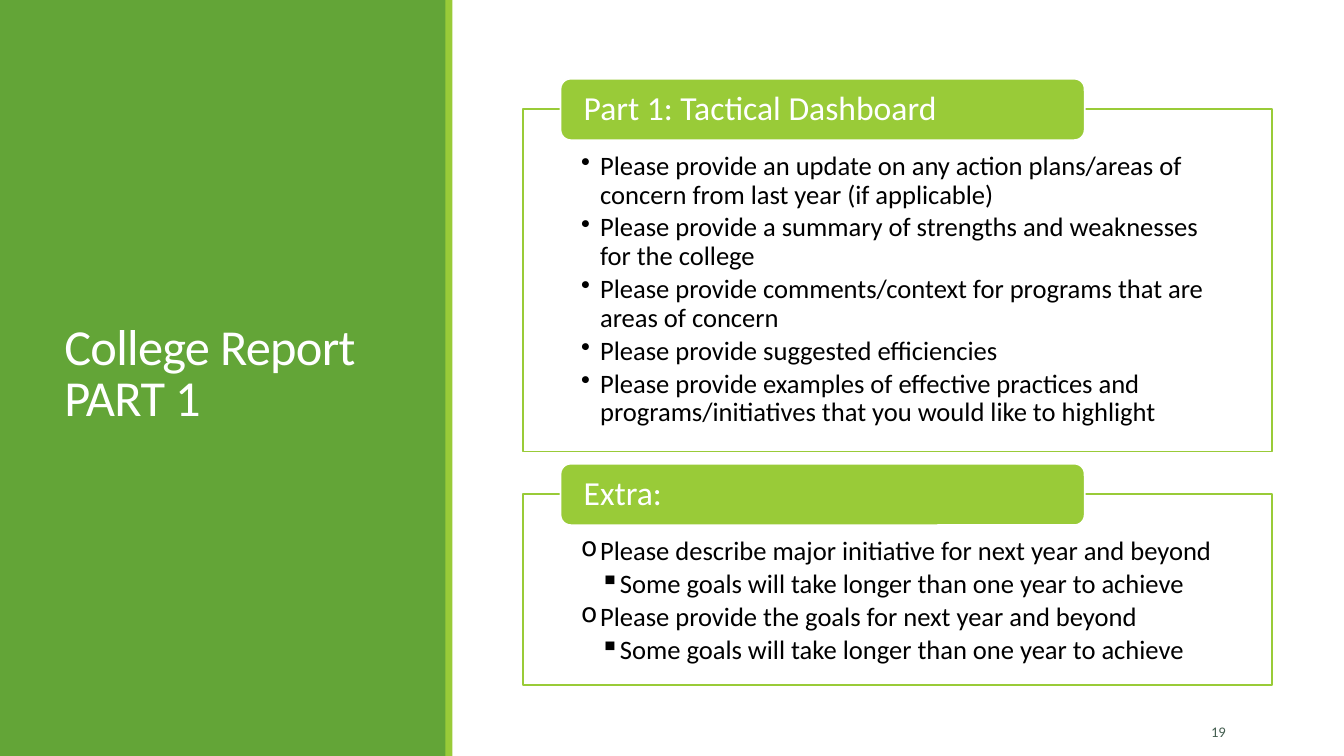
from dataclasses import dataclass

from lxml.etree import SubElement
from pptx import Presentation
from pptx.dml.color import RGBColor
from pptx.enum.shapes import MSO_SHAPE
from pptx.enum.text import MSO_ANCHOR, PP_ALIGN
from pptx.oxml.ns import qn
from pptx.shapes.autoshape import Shape
from pptx.slide import Slide
from pptx.text.text import TextFrame, _Paragraph
from pptx.util import Pt

DARK_GREEN = RGBColor(0x63, 0xA5, 0x37)
LIGHT_GREEN = RGBColor(0x99, 0xCB, 0x38)
SLATE = RGBColor(0x45, 0x5F, 0x51)
WHITE = RGBColor(0xFF, 0xFF, 0xFF)
BLACK = RGBColor(0x00, 0x00, 0x00)
FONT = "Calibri"

SLIDE_WIDTH, SLIDE_HEIGHT = 960, 540
SECTION_LEFT, SECTION_WIDTH = 373.7, 535
HEADING_LEFT, HEADING_WIDTH, HEADING_HEIGHT = 400.4, 374.4, 43.9
HEADING_RISE = 21.6
BULLET_INDENT = 13.5
OUTLINE_WIDTH = 1.25


@dataclass(frozen=True)
class Box:
    left: float
    top: float
    width: float
    height: float

    def lengths(self) -> tuple[Pt, Pt, Pt, Pt]:
        return Pt(self.left), Pt(self.top), Pt(self.width), Pt(self.height)


@dataclass(frozen=True)
class Bullet:
    text: str
    symbol: str
    level: int = 1


@dataclass(frozen=True)
class Section:
    heading: str
    top: float
    height: float
    bullets: tuple[Bullet, ...]


SECTIONS = (
    Section("Part 1: Tactical Dashboard", 77.8, 244.8, (
        Bullet("Please provide an update on any action plans/areas of concern "
               "from last year (if applicable)", "•"),
        Bullet("Please provide a summary of strengths and weaknesses for the college", "•"),
        Bullet("Please provide comments/context for programs that are areas of concern", "•"),
        Bullet("Please provide suggested efficiencies", "•"),
        Bullet("Please provide examples of effective practices and "
               "programs/initiatives that you would like to highlight", "•"),
    )),
    Section("Extra:", 352.8, 136.8, (
        Bullet("Please describe major initiative for next year and beyond", "o"),
        Bullet("Some goals will take longer than one year to achieve", "▪", 2),
        Bullet("Please provide the goals for next year and beyond", "o"),
        Bullet("Some goals will take longer than one year to achieve", "▪", 2),
    )),
)


def add_block(slide: Slide, kind: MSO_SHAPE, box: Box, fill: RGBColor,
              outline: RGBColor | None = None) -> Shape:
    shape = slide.shapes.add_shape(kind, *box.lengths())
    shape.shadow.inherit = False
    shape.fill.solid()
    shape.fill.fore_color.rgb = fill
    if outline is None:
        shape.line.fill.background()
    else:
        shape.line.color.rgb = outline
        shape.line.width = Pt(OUTLINE_WIDTH)
    return shape


def set_frame(text_frame: TextFrame, anchor: MSO_ANCHOR,
              side: float, top: float, bottom: float) -> None:
    text_frame.word_wrap = True
    text_frame.vertical_anchor = anchor
    text_frame.margin_left = text_frame.margin_right = Pt(side)
    text_frame.margin_top, text_frame.margin_bottom = Pt(top), Pt(bottom)


def write(paragraph: _Paragraph, text: str, size: float, color: RGBColor,
          line_spacing: float = 1.0, alignment: PP_ALIGN = PP_ALIGN.LEFT) -> None:
    paragraph.text = text
    paragraph.alignment = alignment
    paragraph.line_spacing = line_spacing
    font = paragraph.runs[0].font
    font.name, font.size, font.color.rgb = FONT, Pt(size), color


def add_label(slide: Slide, box: Box) -> _Paragraph:
    """Add a middle-anchored text box and return its first paragraph."""
    text_frame = slide.shapes.add_textbox(*box.lengths()).text_frame
    set_frame(text_frame, MSO_ANCHOR.MIDDLE, 7.2, 3.6, 3.6)
    return text_frame.paragraphs[0]


def write_bullet(paragraph: _Paragraph, bullet: Bullet) -> None:
    write(paragraph, bullet.text, 19, BLACK, 0.9)
    paragraph.level = bullet.level
    paragraph.space_after = Pt(3)
    properties = paragraph._p.get_or_add_pPr()
    properties.set("marL", str(Pt(BULLET_INDENT * bullet.level)))
    properties.set("indent", str(-Pt(BULLET_INDENT)))
    SubElement(properties, qn("a:buChar")).set("char", bullet.symbol)


def add_section(slide: Slide, section: Section) -> None:
    body = add_block(slide, MSO_SHAPE.RECTANGLE,
                     Box(SECTION_LEFT, section.top, SECTION_WIDTH, section.height),
                     WHITE, LIGHT_GREEN)
    fill_color = body.fill._xPr.find(qn("a:solidFill"))[0]
    SubElement(fill_color, qn("a:alpha")).set("val", "90000")
    text_frame = body.text_frame
    set_frame(text_frame, MSO_ANCHOR.TOP, 41.5, 31, 10.8)
    for index, bullet in enumerate(section.bullets):
        paragraph = text_frame.add_paragraph() if index else text_frame.paragraphs[0]
        write_bullet(paragraph, bullet)

    heading = add_block(slide, MSO_SHAPE.ROUNDED_RECTANGLE,
                        Box(HEADING_LEFT, section.top - HEADING_RISE,
                            HEADING_WIDTH, HEADING_HEIGHT),
                        LIGHT_GREEN, WHITE)
    set_frame(heading.text_frame, MSO_ANCHOR.MIDDLE, 14.4, 0, 0)
    write(heading.text_frame.paragraphs[0], section.heading, 24, WHITE, 0.9)


def main() -> None:
    presentation = Presentation()
    presentation.slide_width = Pt(SLIDE_WIDTH)
    presentation.slide_height = Pt(SLIDE_HEIGHT)
    slide = presentation.slides.add_slide(presentation.slide_layouts[6])

    add_block(slide, MSO_SHAPE.RECTANGLE, Box(0, 0, 319, SLIDE_HEIGHT), DARK_GREEN)
    add_block(slide, MSO_SHAPE.RECTANGLE, Box(318.2, 0, 5, SLIDE_HEIGHT), LIGHT_GREEN)

    title = add_label(slide, Box(38.9, 41, 242.6, 454.3))
    write(title, "College Report PART 1", 36, WHITE, 0.85)
    title.runs[0]._r.get_or_add_rPr().set("spc", "-50")

    for section in SECTIONS:
        add_section(slide, section)

    page_number = add_label(slide, Box(797, 508.3, 85.7, 28.8))
    write(page_number, "19", 10.5, SLATE, alignment=PP_ALIGN.RIGHT)

    presentation.save("out.pptx")


if __name__ == "__main__":
    main()
